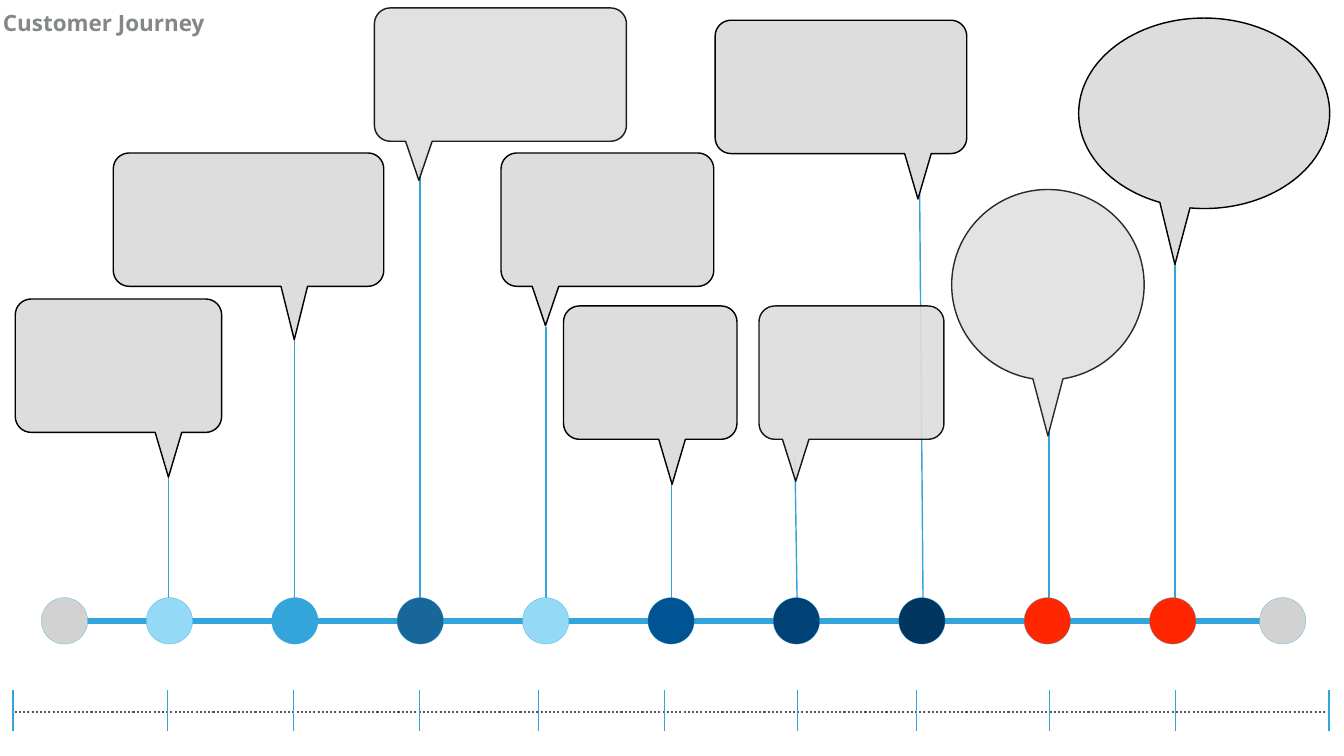
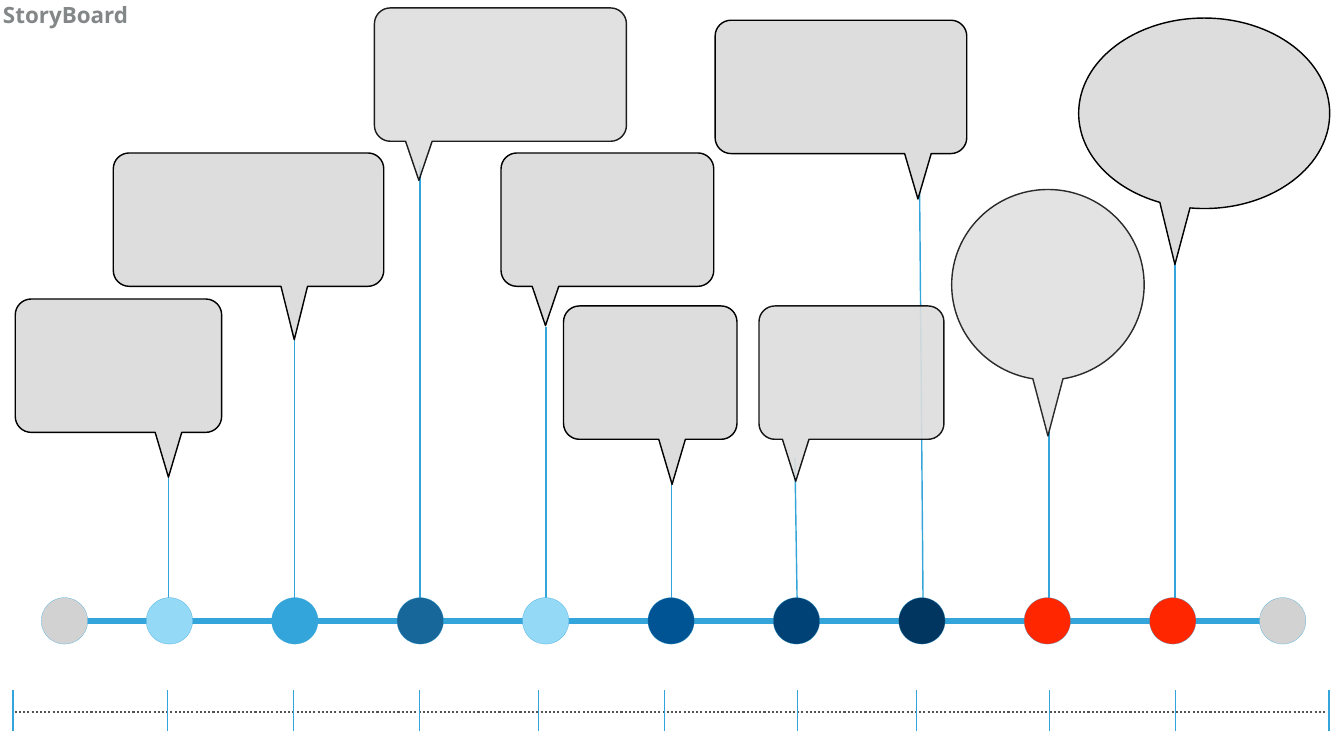
from math import acos, cos, pi, sin, tan

from lxml import etree
from pptx import Presentation
from pptx.dml.color import RGBColor
from pptx.enum.dml import MSO_LINE
from pptx.enum.shapes import MSO_CONNECTOR, MSO_SHAPE
from pptx.enum.text import MSO_ANCHOR, MSO_AUTO_SIZE, PP_ALIGN
from pptx.oxml.ns import qn
from pptx.util import Cm, Pt

STRAIGHT = MSO_CONNECTOR.STRAIGHT
OVAL = MSO_SHAPE.OVAL
DOTTED = MSO_LINE.ROUND_DOT
MIDDLE = MSO_ANCHOR.MIDDLE
LEFT = PP_ALIGN.LEFT
NO_AUTOFIT = MSO_AUTO_SIZE.NONE

TITLE_ONLY = 5
FONT = "Open Sans"
COLOURS = {
    "title": "838787", "track": "34A5DA", "scale": "535353",
    "bubble": "DDDDDD", "outline": "000000", "end": "D2D2D2",
    "pale": "94D9F6", "sky": "34A5DA", "steel": "18679A", "royal": "005493",
    "navy": "004275", "midnight": "00365F", "alert": "FF2600",
}

# All lengths below are in centimetres
SLIDE_WIDTH, SLIDE_HEIGHT = 67.73, 38.1
TRACK_Y, TRACK_START, TRACK_END = 31.29, 3.99, 63.73
STOP_SIZE, STOP_TOP = 2.34, 30.12
STOP_LEFT, STOP_STEP = 7.37, 6.32
END_STOPS = (2.08, 63.47)
STOPS = ("pale", "sky", "steel", "pale", "royal", "navy", "midnight",
         "alert", "alert")

# Stems: top, foot, sideways drift of the top
STEM_X, STEM_STEP = 8.49, 6.34
STEMS = (
    (22.56, 30.86, 0), (16.92, 31.19, 0), (8.36, 31.55, 0),
    (16.46, 31.9, 0), (23.42, 31.19, 0), (23.06, 31.55, -0.13),
    (8.0, 31.9, -0.2), (21.77, 31.19, 0), (12.65, 31.55, 0),
)

# Bubbles: left, top, width, tip x, tip y, opacity in percent
BOX_HEIGHT, BOX_RADIUS, BOX_TAIL = 6.72, 0.8, 0.67
BOX_BUBBLES = (
    (0.77, 15.07, 10.4, 8.49, 24.05, 100),
    (5.71, 7.71, 13.63, 14.83, 17.12, 100),
    (18.87, 0.4, 12.7, 21.11, 9.09, 88),
    (25.25, 7.71, 10.72, 27.49, 16.41, 100),
    (28.4, 15.42, 8.74, 33.87, 24.41, 100),
    (38.25, 15.42, 9.32, 40.1, 24.26, 91),
    (36.04, 1.02, 12.68, 46.26, 10.03, 100),
)
OVAL_HEIGHT, OVAL_TAIL = 9.6, 0.76
OVAL_BUBBLES = (
    (47.96, 9.55, 9.7, 52.81, 21.97, 82),
    (54.36, 0.91, 12.65, 59.21, 13.33, 100),
)

SCALE_Y, SCALE_START, SCALE_END = 35.89, 0.74, 66.88
TICK_TOP, TICK_FOOT = 34.8, 36.86
TICKS = (8.41, 14.76, 21.11, 27.11, 33.46, 40.16, 46.16, 52.86, 59.21)
END_TICKS = (0.66, 66.98)

# Title: text, top, width
PAGES = (("Customer Journey", 0.23, 10.46), ("StoryBoard", -0.15, 6.63))


def rgb(name):
    return RGBColor.from_string(COLOURS[name])


def write(frame, text, size=32, colour="title", bold=True, align=LEFT):
    paragraph = frame.paragraphs[0]
    paragraph.alignment = align
    run = paragraph.add_run()
    run.text = text
    run.font.name = FONT
    run.font.size = Pt(size)
    run.font.bold = bold
    run.font.color.rgb = rgb(colour)


def arc(cx, cy, rx, ry, start, end):
    """Bezier step along an ellipse: two handles and the end point."""
    k = 4 / 3 * tan((end - start) / 4)
    return ((cx + rx * (cos(start) - k * sin(start)),
             cy + ry * (sin(start) + k * cos(start))),
            (cx + rx * (cos(end) + k * sin(end)),
             cy + ry * (sin(end) - k * cos(end))),
            (cx + rx * cos(end), cy + ry * sin(end)))


# An outline is a list of steps: one point is a line, three are a curve
def box_outline(left, top, width, tip_x, tip_y):
    r = BOX_RADIUS
    right, bottom = left + width, top + BOX_HEIGHT
    return [
        ((left + r, top),),
        arc(left + r, top + r, r, r, 1.5 * pi, pi),
        ((left, bottom - r),),
        arc(left + r, bottom - r, r, r, pi, pi / 2),
        ((tip_x - BOX_TAIL, bottom),),
        ((tip_x, tip_y),),
        ((tip_x + BOX_TAIL, bottom),),
        ((right - r, bottom),),
        arc(right - r, bottom - r, r, r, pi / 2, 0),
        ((right, top + r),),
        arc(right - r, top + r, r, r, 0, -pi / 2),
    ]


def oval_outline(left, top, width, tip_x, tip_y):
    rx, ry = width / 2, OVAL_HEIGHT / 2
    rim = (left + rx, top + ry, rx, ry)
    tail_left = acos((tip_x - OVAL_TAIL - left - rx) / rx)
    tail_right = acos((tip_x + OVAL_TAIL - left - rx) / rx)
    return [
        ((left + rx, top),),
        arc(*rim, 1.5 * pi, pi),
        arc(*rim, pi, tail_left),
        ((tip_x, tip_y),),
        ((tip_x + OVAL_TAIL, top + ry + ry * sin(tail_right)),),
        arc(*rim, tail_right, 0),
        arc(*rim, 0, -pi / 2),
    ]


class Board:
    """Holds the presentation, its style and the current slide."""

    def __init__(self):
        self.deck = Presentation()
        self.deck.slide_width = Cm(SLIDE_WIDTH)
        self.deck.slide_height = Cm(SLIDE_HEIGHT)
        self.slide = None

    def add_page(self):
        layout = self.deck.slide_layouts[TITLE_ONLY]
        self.slide = self.deck.slides.add_slide(layout)

    def title(self, text, top, width):
        heading = self.slide.shapes.title
        heading.left, heading.top = Cm(0), Cm(top)
        heading.width, heading.height = Cm(width), Cm(1.8)
        frame = heading.text_frame
        frame.margin_left = frame.margin_top = frame.margin_bottom = Cm(0.15)
        frame.margin_right = Cm(0)
        frame.vertical_anchor = MIDDLE
        frame.auto_size = NO_AUTOFIT
        frame.word_wrap = False
        write(frame, text)

    def line(self, start, end, colour="track", weight=2, dash=None):
        rule = self.slide.shapes.add_connector(
            STRAIGHT, *(Cm(v) for v in (*start, *end)))
        rule.line.color.rgb = rgb(colour)
        rule.line.width = Pt(weight)
        if dash:
            rule.line.dash_style = dash
        etree.SubElement(rule.element.spPr, qn("a:effectLst"))

    def paint(self, shape, fill, outline, weight):
        shape.shadow.inherit = False
        shape.fill.solid()
        shape.fill.fore_color.rgb = rgb(fill)
        shape.line.color.rgb = rgb(outline)
        shape.line.width = Pt(weight)

    def stop(self, left, colour):
        disc = self.slide.shapes.add_shape(
            OVAL, Cm(left), Cm(STOP_TOP), Cm(STOP_SIZE), Cm(STOP_SIZE))
        self.paint(disc, colour, "track", 0.25)

    def bubble(self, outline, opacity):
        start, *rest = [(Cm(x), Cm(y)) for *_, (x, y) in outline]
        builder = self.slide.shapes.build_freeform(*start)
        builder.add_line_segments(rest, close=True)
        speech = builder.convert_to_shape()
        self.bend(speech, outline[1:])
        self.paint(speech, "bubble", "outline", 2)
        if opacity < 100:
            for colour in speech.element.spPr.iter(qn("a:srgbClr")):
                alpha = etree.SubElement(colour, qn("a:alpha"))
                alpha.set("val", str(opacity * 1000))

    def bend(self, shape, steps):
        """Turn the segments that have handles into curves."""
        segments = list(shape.element.spPr.iter(qn("a:lnTo")))
        for segment, step in zip(segments, steps):
            if len(step) == 1:
                continue
            curve = etree.Element(qn("a:cubicBezTo"))
            for x, y in step:
                point = etree.SubElement(curve, qn("a:pt"))
                point.set("x", str(Cm(x) - shape.left))
                point.set("y", str(Cm(y) - shape.top))
            segment.getparent().replace(segment, curve)


def draw_journey(board):
    # Stems behind everything
    for i, (top, foot, drift) in enumerate(STEMS):
        x = STEM_X + i * STEM_STEP
        board.line((x, foot), (x + drift, top))

    # Track with its stops
    board.line((TRACK_START, TRACK_Y), (TRACK_END, TRACK_Y), weight=8)
    for i, colour in enumerate(STOPS):
        board.stop(STOP_LEFT + i * STOP_STEP, colour)

    # Speech bubbles
    for *place, opacity in BOX_BUBBLES:
        board.bubble(box_outline(*place), opacity)
    for *place, opacity in OVAL_BUBBLES:
        board.bubble(oval_outline(*place), opacity)

    # Ends of the track
    for left in END_STOPS:
        board.stop(left, "end")

    # Time scale
    board.line((SCALE_START, SCALE_Y), (SCALE_END, SCALE_Y),
               colour="scale", weight=3, dash=DOTTED)
    for ticks, weight in ((TICKS, 1), (END_TICKS, 2)):
        for x in ticks:
            board.line((x, TICK_FOOT), (x, TICK_TOP), weight=weight)


def main():
    board = Board()
    for text, top, width in PAGES:
        board.add_page()
        board.title(text, top, width)
        draw_journey(board)
    board.deck.save("out.pptx")


if __name__ == "__main__":
    main()
